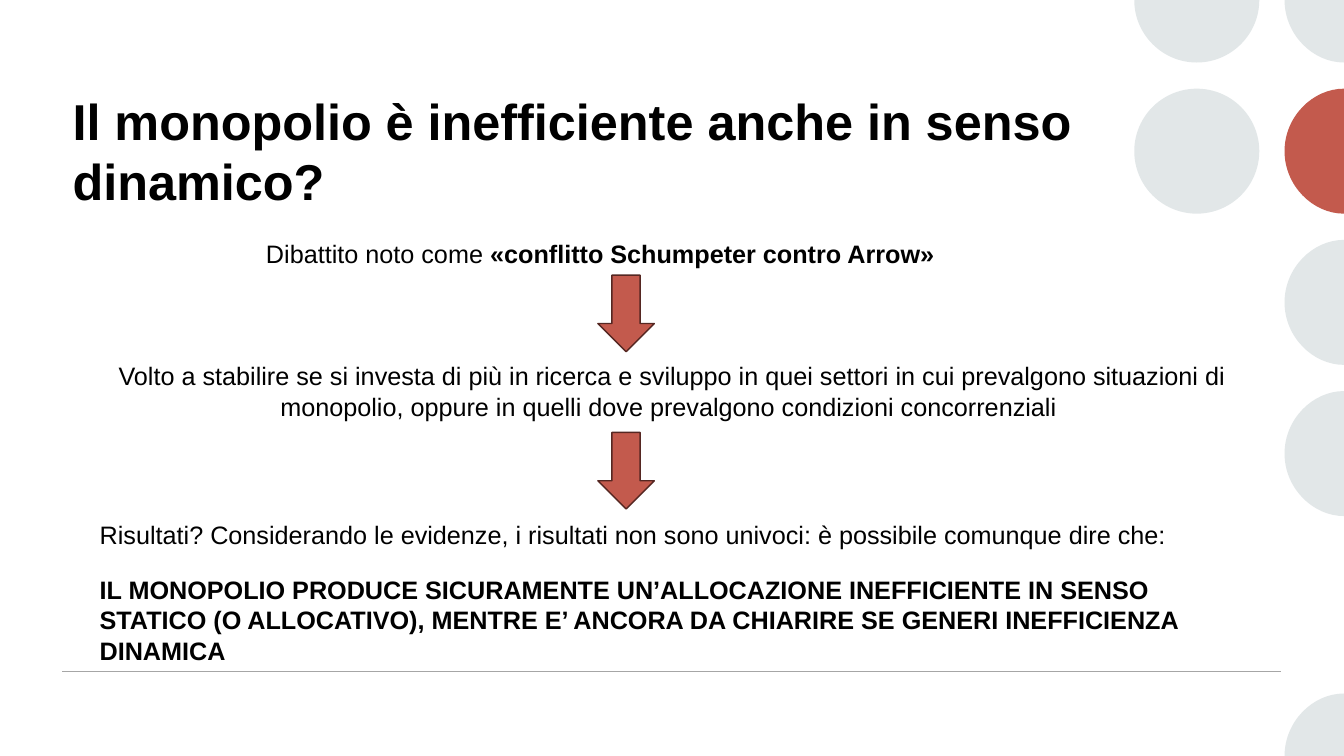
from dataclasses import dataclass

from lxml import etree
from pptx import Presentation
from pptx import util as u
from pptx.dml.color import RGBColor
from pptx.enum import shapes, text
from pptx.oxml.ns import qn

WIDTH, HEIGHT = 13.33, 7.5
RADIUS = 0.62
PITCH = 1.5
CURVE = 0.55
INNER_COLUMN, OUTER_COLUMN = 11.87, 13.36
GREY, RED, DARK_RED, RULE, BLACK = "E2E7E8", "C35A4D", "552722", "A6A6A6", "000000"

Point = tuple[float, float]
LOWER_HALF: list[Point] = [(-1, 0), (1, 0), (0, 1), (-1, 0)]
LOWER_LEFT: list[Point] = [(-1, 0), (0, 0), (0, 1), (-1, 0)]
LEFT_HALF: list[Point] = [(0, -1), (0, 1), (-1, 0), (0, -1)]
UPPER_LEFT: list[Point] = [(0, -1), (0, 0), (-1, 0), (0, -1)]


@dataclass
class CutCircle:
    column: float
    row: int
    outline: list[Point]
    color: str = GREY


@dataclass
class Run:
    content: str
    bold: bool = False


@dataclass
class Statement:
    left: float
    top: float
    width: float
    height: float
    runs: list[Run]
    wrap: bool = True
    centered: bool = False


@dataclass
class Arrow:
    top: float


CUT_CIRCLES = [
    CutCircle(INNER_COLUMN, 0, LOWER_HALF),
    CutCircle(OUTER_COLUMN, 5, UPPER_LEFT),
    CutCircle(OUTER_COLUMN, 3, LEFT_HALF),
    CutCircle(OUTER_COLUMN, 2, LEFT_HALF),
    CutCircle(OUTER_COLUMN, 1, LEFT_HALF, RED),
    CutCircle(OUTER_COLUMN, 0, LOWER_LEFT),
]
ARGUMENT = [
    Statement(2.54, 2.32, 7.16, 0.4, [
        Run("Dibattito noto come "),
        Run("«conflitto Schumpeter contro Arrow»", True),
    ], wrap=False),
    Arrow(2.73),
    Statement(0.6, 3.53, 12.13, 0.71, [
        Run("Volto a stabilire se si investa di più in ricerca e sviluppo in quei settori "
            "in cui prevalgono situazioni di monopolio, oppure in quelli dove prevalgono "
            "condizioni concorrenziali "),
    ], centered=True),
    Arrow(4.29),
    Statement(0.89, 5.1, 11.19, 0.4, [
        Run("Risultati? Considerando le evidenze, i risultati non sono univoci: "
            "è possibile comunque dire che:"),
    ], wrap=False),
    Statement(0.89, 5.65, 11.7, 1.01, [
        Run("IL MONOPOLIO PRODUCE SICURAMENTE UN’ALLOCAZIONE INEFFICIENTE IN SENSO "
            "STATICO (O ALLOCATIVO), MENTRE E’ ANCORA DA CHIARIRE SE GENERI "
            "INEFFICIENZA DINAMICA", True),
    ]),
]


def color(value: str) -> RGBColor:
    return RGBColor.from_string(value)


def format_font(font, size: int, bold: bool) -> None:
    font.name = "Arial"
    font.size = u.Pt(size)
    font.bold = bold
    font.color.rgb = color(BLACK)


def fill_shape(shape, fill: str, line: str | None = None) -> None:
    shape.shadow.inherit = False
    shape.fill.solid()
    shape.fill.fore_color.rgb = color(fill)
    if line:
        shape.line.color.rgb = color(line)
        shape.line.width = u.Pt(1)
    else:
        shape.line.fill.background()


def place(circle: CutCircle, point: Point) -> tuple[int, int]:
    x = min(circle.column + RADIUS * point[0], WIDTH)
    return u.Inches(x), u.Inches(circle.row * PITCH + RADIUS * point[1])


def is_quarter(start: Point, end: Point) -> bool:
    return (0, 0) not in (start, end) and start[0] * end[0] + start[1] * end[1] == 0


def draw_cut_circle(slide, circle: CutCircle) -> None:
    corners = [place(circle, point) for point in circle.outline]
    builder = slide.shapes.build_freeform(*corners[0])
    builder.add_line_segments(corners[1:], close=True)
    shape = builder.convert_to_shape()
    lines = list(shape._element.iter(qn("a:lnTo")))
    for line, start, end in zip(lines, circle.outline, circle.outline[1:]):
        if not is_quarter(start, end):
            continue
        leaving = (start[0] + CURVE * end[0], start[1] + CURVE * end[1])
        arriving = (end[0] + CURVE * start[0], end[1] + CURVE * start[1])
        curve = etree.Element(qn("a:cubicBezTo"))
        for point in (leaving, arriving, end):
            x, y = place(circle, point)
            etree.SubElement(curve, qn("a:pt"), x=str(x - shape.left), y=str(y - shape.top))
        line.getparent().replace(line, curve)
    fill_shape(shape, circle.color)


def draw_whole_circle(slide) -> None:
    circle = slide.shapes.add_shape(
        shapes.MSO_SHAPE.OVAL, u.Inches(INNER_COLUMN - RADIUS), u.Inches(PITCH - RADIUS),
        u.Inches(2 * RADIUS), u.Inches(2 * RADIUS))
    fill_shape(circle, GREY)


def draw_rule(slide) -> None:
    rule = slide.shapes.add_connector(
        shapes.MSO_CONNECTOR.STRAIGHT,
        u.Inches(0.62), u.Inches(6.66), u.Inches(12.71), u.Inches(6.66))
    rule.line.color.rgb = color(RULE)
    rule.line.width = u.Pt(1)
    etree.SubElement(rule._element.spPr, qn("a:effectLst"))


def write_title(slide) -> None:
    title = slide.shapes.title
    title.left, title.top = u.Inches(0.62), u.Inches(0.84)
    title.width, title.height = u.Inches(10.67), u.Inches(1.39)
    frame = title.text_frame
    frame.text = "Il monopolio è inefficiente anche in senso dinamico?"
    frame.word_wrap = True
    frame.auto_size = text.MSO_AUTO_SIZE.NONE
    frame.vertical_anchor = text.MSO_ANCHOR.TOP
    paragraph = frame.paragraphs[0]
    paragraph.alignment = text.PP_ALIGN.LEFT
    format_font(paragraph.runs[0].font, 36, True)
    slide.shapes._spTree.append(title._element)


def write_statement(slide, statement: Statement) -> None:
    box = slide.shapes.add_textbox(
        u.Inches(statement.left), u.Inches(statement.top),
        u.Inches(statement.width), u.Inches(statement.height))
    frame = box.text_frame
    frame.word_wrap = statement.wrap
    frame.auto_size = text.MSO_AUTO_SIZE.SHAPE_TO_FIT_TEXT
    paragraph = frame.paragraphs[0]
    paragraph.alignment = text.PP_ALIGN.CENTER if statement.centered else text.PP_ALIGN.LEFT
    for part in statement.runs:
        run = paragraph.add_run()
        run.text = part.content
        format_font(run.font, 18, part.bold)


def draw_arrow(slide, arrow: Arrow) -> None:
    shape = slide.shapes.add_shape(
        shapes.MSO_SHAPE.DOWN_ARROW,
        u.Inches(5.93), u.Inches(arrow.top), u.Inches(0.56), u.Inches(0.76))
    fill_shape(shape, RED, DARK_RED)


def main() -> None:
    presentation = Presentation()
    presentation.slide_width = u.Inches(WIDTH)
    presentation.slide_height = u.Inches(HEIGHT)
    slide = presentation.slides.add_slide(presentation.slide_layouts[5])
    draw_whole_circle(slide)
    for circle in CUT_CIRCLES:
        draw_cut_circle(slide, circle)
    draw_rule(slide)
    write_title(slide)
    for step in ARGUMENT:
        if isinstance(step, Arrow):
            draw_arrow(slide, step)
        else:
            write_statement(slide, step)
    presentation.save("out.pptx")


if __name__ == "__main__":
    main()
